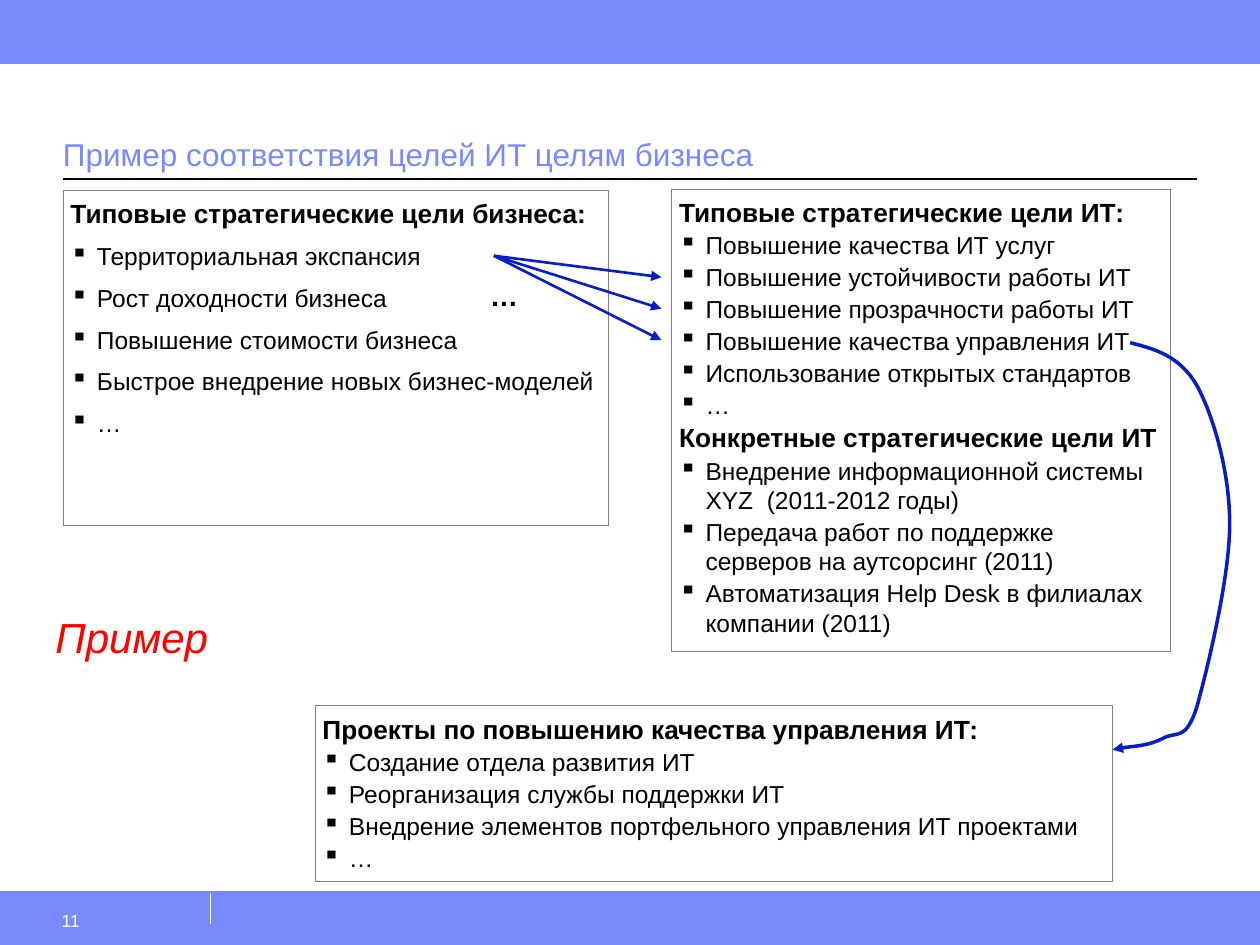
from dataclasses import dataclass

from lxml import etree
from pptx import Presentation
from pptx.dml.color import RGBColor
from pptx.enum.shapes import MSO_CONNECTOR, MSO_SHAPE
from pptx.enum.text import MSO_ANCHOR, PP_ALIGN
from pptx.oxml.ns import qn
from pptx.util import Inches, Pt

FONT = "Arial"
BLACK, WHITE, GRAY, RED = "000000", "FFFFFF", "808080", "FF0000"
PERIWINKLE, ARROW_BLUE = "7889FB", "061DC8"
HEADING_SIZE, BULLET_SIZE = 15, 14
BULLET_INDENT = Inches(0.21)


@dataclass
class Section:
    heading: str
    bullets: list[str]


@dataclass
class Panel:
    """A framed list; spacing is the gap before a paragraph as a share of its font size."""
    left: float
    top: float
    width: float
    height: float
    spacing: float
    sections: list[Section]


@dataclass
class Label:
    text: str
    left: float
    top: float
    width: float
    height: float
    size: int
    color: str
    insets: tuple[float, float, float, float] = (0, 0.05, 0, 0.05)
    anchor: MSO_ANCHOR = MSO_ANCHOR.TOP
    bold: bool = False
    italic: bool = False


PANELS = [
    Panel(5.33, 1.5, 3.96, 3.67, 0.1, [
        Section("Типовые стратегические цели ИТ:", [
            "Повышение качества ИТ услуг",
            "Повышение устойчивости работы ИТ",
            "Повышение прозрачности работы ИТ",
            "Повышение качества управления ИТ",
            "Использование открытых стандартов",
            "…",
        ]),
        Section("Конкретные стратегические цели ИТ", [
            "Внедрение информационной системы XYZ  (2011-2012 годы)",
            "Передача работ по поддержке серверов на аутсорсинг (2011)",
            "Автоматизация Help Desk в филиалах компании (2011)",
        ]),
    ]),
    Panel(0.5, 1.51, 4.33, 2.66, 0.5, [
        Section("Типовые стратегические цели бизнеса:", [
            "Территориальная экспансия",
            "Рост доходности бизнеса",
            "Повышение стоимости бизнеса",
            "Быстрое внедрение новых бизнес-моделей",
            "…",
        ]),
    ]),
    Panel(2.5, 5.6, 6.33, 1.4, 0.1, [
        Section("Проекты по повышению качества управления ИТ:", [
            "Создание отдела развития ИТ",
            "Реорганизация службы поддержки ИТ",
            "Внедрение элементов портфельного управления ИТ проектами",
            "…",
        ]),
    ]),
]

LABELS = [
    Label("Пример соответствия целей ИТ целям бизнеса", 0.5, 0.5, 9, 0.92, 18,
          PERIWINKLE, anchor=MSO_ANCHOR.BOTTOM),
    Label("…", 3.89, 2.16, 0.58, 0.37, 16, BLACK, bold=True),
    Label("11", 0.33, 7.15, 1.33, 0.35, 10, WHITE, insets=(0.16, 0.07, 0.1, 0.05)),
    Label("Пример", 0.44, 4.8, 1.41, 0.61, 24, RED, italic=True),
]

CURVE_START = (8.97, 2.72)
CURVE_SEGMENTS = [
    ((9.16, 2.77), (9.36, 2.82), (9.5, 3.06)),
    ((9.63, 3.3), (9.76, 3.74), (9.76, 4.16)),
    ((9.76, 4.59), (9.58, 5.32), (9.5, 5.61)),
    ((9.41, 5.89), (9.34, 5.8), (9.23, 5.86)),
    ((9.12, 5.92), (8.9, 5.93), (8.83, 5.95)),
]


def rgb(color: str) -> RGBColor:
    return RGBColor.from_string(color)


def set_line(shape, color: str, width: float, arrow: bool = False) -> None:
    shape.line.color.rgb = rgb(color)
    shape.line.width = Pt(width)
    if arrow:
        line = shape.line._get_or_add_ln()
        etree.SubElement(line, qn("a:tailEnd"), type="triangle")


def add_rectangle(slide, left, top, width, height, line_color, line_width, fill=None):
    shape = slide.shapes.add_shape(MSO_SHAPE.RECTANGLE, Inches(left), Inches(top),
                                   Inches(width), Inches(height))
    shape.shadow.inherit = False
    if fill:
        shape.fill.solid()
        shape.fill.fore_color.rgb = rgb(fill)
    else:
        shape.fill.background()
    set_line(shape, line_color, line_width)
    return shape


def add_line(slide, start, end, color: str, width: float, arrow: bool = False) -> None:
    connector = slide.shapes.add_connector(
        MSO_CONNECTOR.STRAIGHT, *(Inches(value) for value in (*start, *end)))
    set_line(connector, color, width, arrow)
    etree.SubElement(connector._element.spPr, qn("a:effectLst"))


def set_frame(frame, insets, anchor: MSO_ANCHOR) -> None:
    frame.word_wrap = True
    frame.vertical_anchor = anchor
    (frame.margin_left, frame.margin_top,
     frame.margin_right, frame.margin_bottom) = map(Inches, insets)


def write(paragraph, text: str, size: int, color: str, bold=False, italic=False) -> None:
    paragraph.text = text
    paragraph.alignment = PP_ALIGN.LEFT
    font = paragraph.font
    font.name, font.size, font.bold, font.italic = FONT, Pt(size), bold, italic
    font.color.rgb = rgb(color)


def add_bullet(paragraph) -> None:
    properties = paragraph._p.get_or_add_pPr()
    properties.set("marL", str(BULLET_INDENT))
    properties.set("indent", str(-BULLET_INDENT))
    bullet = etree.Element(qn("a:buChar"), char="▪")
    properties.find(qn("a:defRPr")).addprevious(bullet)


def add_panel(slide, panel: Panel) -> None:
    shape = add_rectangle(slide, panel.left, panel.top, panel.width, panel.height, GRAY, 0.5)
    frame = shape.text_frame
    set_frame(frame, (0.06,) * 4, MSO_ANCHOR.TOP)
    rows = [(text, is_heading) for section in panel.sections
            for text, is_heading in [(section.heading, True),
                                     *((bullet, False) for bullet in section.bullets)]]
    for index, (text, is_heading) in enumerate(rows):
        paragraph = frame.add_paragraph() if index else frame.paragraphs[0]
        size = HEADING_SIZE if is_heading else BULLET_SIZE
        write(paragraph, text, size, BLACK, bold=is_heading)
        paragraph.space_before = Pt(size * panel.spacing if index else 0)
        if not is_heading:
            add_bullet(paragraph)


def add_label(slide, label: Label) -> None:
    box = slide.shapes.add_textbox(Inches(label.left), Inches(label.top),
                                   Inches(label.width), Inches(label.height))
    set_frame(box.text_frame, label.insets, label.anchor)
    write(box.text_frame.paragraphs[0], label.text, label.size, label.color,
          label.bold, label.italic)


def add_curved_arrow(slide, start, segments, color: str, width: float) -> None:
    """Build a freeform through the segment ends, then bend each side into a Bezier."""
    builder = slide.shapes.build_freeform(*map(Inches, start))
    builder.add_line_segments(
        [tuple(map(Inches, segment[-1])) for segment in segments], close=False)
    shape = builder.convert_to_shape()
    shape.shadow.inherit = False
    shape.fill.background()
    set_line(shape, color, width, arrow=True)
    sides = list(shape._element.iter(qn("a:lnTo")))
    for side, segment in zip(sides, segments):
        curve = etree.Element(qn("a:cubicBezTo"))
        for x, y in segment:
            etree.SubElement(curve, qn("a:pt"), x=str(Inches(x) - shape.left),
                             y=str(Inches(y) - shape.top))
        side.getparent().replace(side, curve)


def main() -> None:
    presentation = Presentation()
    presentation.slide_width, presentation.slide_height = Inches(10), Inches(7.5)
    slide = presentation.slides.add_slide(presentation.slide_layouts[6])

    for top, height in ((7.08, 0.42), (0, 0.5)):
        add_rectangle(slide, 0, top, 10, height, PERIWINKLE, 0.75, fill=PERIWINKLE)
    add_line(slide, (1.67, 7.33), (1.67, 7.08), WHITE, 0.75)
    for y in (0.42, 7.08):
        add_line(slide, (0, y), (10, y), PERIWINKLE, 0.5)
    add_line(slide, (0.5, 1.42), (9.5, 1.42), BLACK, 0.75)

    for panel in PANELS:
        add_panel(slide, panel)
    for target_y in (2.2, 2.45, 2.7):
        add_line(slide, (3.92, 2.03), (5.25, target_y), ARROW_BLUE, 1.5, arrow=True)
    add_curved_arrow(slide, CURVE_START, CURVE_SEGMENTS, ARROW_BLUE, 2)
    for label in LABELS:
        add_label(slide, label)

    presentation.save("out.pptx")


if __name__ == "__main__":
    main()
